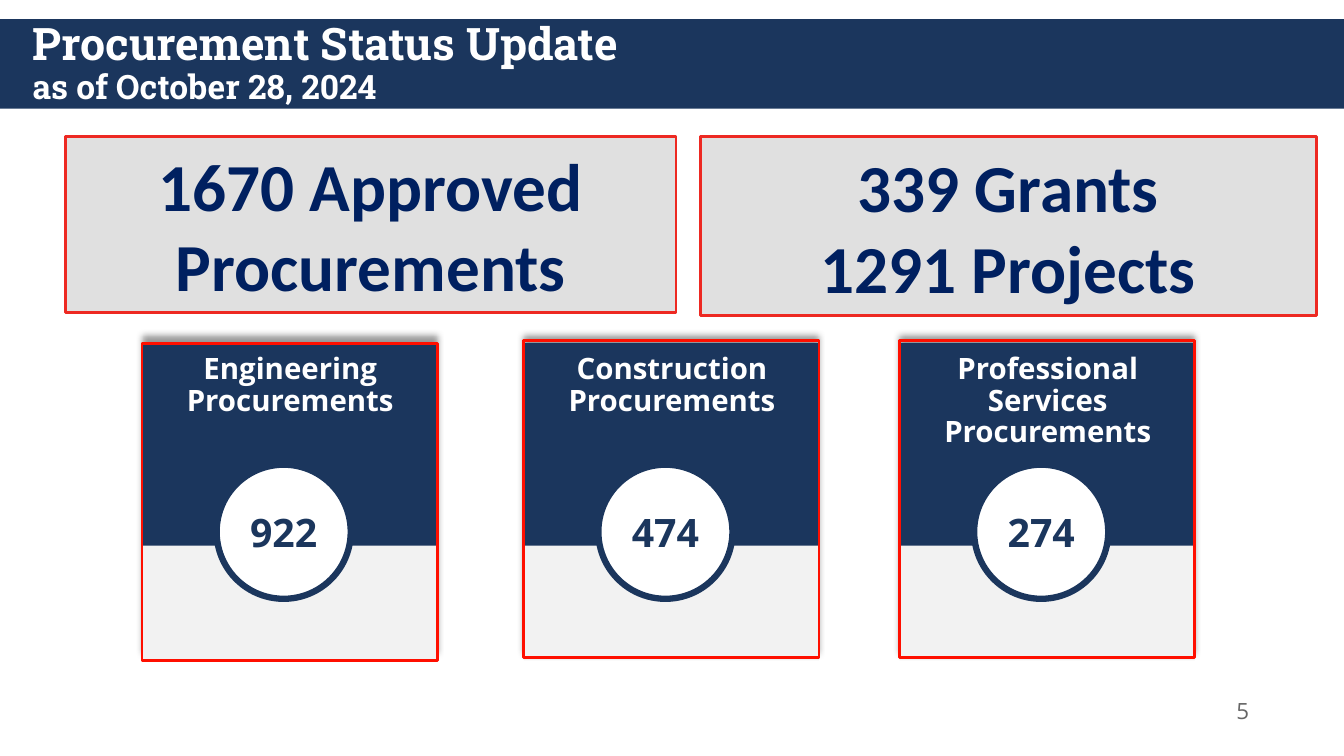
"""Build the procurement status slide."""
from dataclasses import dataclass

from lxml.etree import SubElement
from pptx import Presentation
from pptx.dml.color import RGBColor
from pptx.enum.shapes import MSO_SHAPE
from pptx.enum.text import MSO_ANCHOR, PP_ALIGN
from pptx.oxml.ns import qn
from pptx.shapes.autoshape import Shape
from pptx.slide import Slide
from pptx.text.text import Font
from pptx.util import Cm, Pt

COLORS = {
    "navy": "1B365D", "white": "FFFFFF", "light": "F2F2F2", "panel": "E0E0E0",
    "panel_line": "ED2922", "frame": "FF0F00", "total": "002060",
    "number": "666666", "shadow": "000000",
}
CARD_TOP, CARD_W, CARD_H = 8.64, 7.44, 8.0
HEADER_H, CIRCLE, LABEL_W = 5.11, 3.38, 6.81


@dataclass
class Box:
    """Position and size in centimetres."""
    x: float
    y: float
    w: float
    h: float


@dataclass
class Panel:
    """A large summary figure."""
    box: Box
    lines: list[str]


@dataclass
class Card:
    """A procurement category with its count."""
    x: float
    frame_top: float
    label: str
    label_h: float
    count: str


PANELS = [
    Panel(Box(1.65, 3.45, 15.39, 4.42), ["1670 Approved Procurements"]),
    Panel(Box(17.65, 3.45, 15.52, 4.5), ["339 Grants", "1291 Projects"]),
]
CARDS = [
    Card(3.58, 8.66, "Engineering Procurements", 1.8, "922"),
    Card(13.2, 8.59, "Construction Procurements", 1.8, "474"),
    Card(22.67, 8.59, "Professional Services Procurements", 2.7, "274"),
]


def rgb(name: str) -> RGBColor:
    """Look up a colour."""
    return RGBColor.from_string(COLORS[name])


def style_font(font: Font, name: str, size: float, color: str, bold: bool) -> None:
    """Set the face, size, colour and weight of a font."""
    font.name, font.size, font.bold = name, Pt(size), bold
    font.color.rgb = rgb(color)


def add_box(s: Slide, box: Box, fill: str = "", line: str = "", width: float = 2,
            kind: MSO_SHAPE = MSO_SHAPE.RECTANGLE) -> Shape:
    """Add a flat preset shape."""
    sp = s.shapes.add_shape(kind, Cm(box.x), Cm(box.y), Cm(box.w), Cm(box.h))
    sp.shadow.inherit = False
    if fill:
        sp.fill.solid()
        sp.fill.fore_color.rgb = rgb(fill)
    else:
        sp.fill.background()
    if line:
        sp.line.color.rgb = rgb(line)
        sp.line.width = Pt(width)
    else:
        sp.line.fill.background()
    return sp


def add_textbox(s: Slide, box: Box) -> Shape:
    """Add an empty text box."""
    return s.shapes.add_textbox(Cm(box.x), Cm(box.y), Cm(box.w), Cm(box.h))


def write(sp: Shape, lines: list[str], name: str, size: float, color: str,
          bold: bool = True, anchor: MSO_ANCHOR = MSO_ANCHOR.MIDDLE,
          margin: float = 0, spacing: float = 1) -> None:
    """Fill a shape with centred paragraphs."""
    tf = sp.text_frame
    tf.word_wrap = True
    tf.vertical_anchor = anchor
    tf.margin_left = tf.margin_right = Cm(margin)
    tf.margin_top = tf.margin_bottom = Cm(margin / 2)
    tf.text = "\n".join(lines)
    for p in tf.paragraphs:
        p.alignment = PP_ALIGN.CENTER
        p.line_spacing = spacing
        style_font(p.font, name, size, color, bold)


def add_shadow(sp: Shape) -> None:
    """Give a shape a soft shadow along its upper edge."""
    effects = sp._element.spPr.find(qn("a:effectLst"))
    shadow = SubElement(effects, qn("a:outerShdw"), blurRad=str(Pt(5)),
                        dist=str(Pt(5)), dir="16200000", rotWithShape="0")
    color = SubElement(shadow, qn("a:srgbClr"), val=COLORS["shadow"])
    SubElement(color, qn("a:alpha"), val="40000")


def add_title(s: Slide) -> None:
    """Place the title over its navy band."""
    band = add_box(s, Box(0, 0.48, 33.87, 2.26), "navy")
    s.shapes._spTree.insert(2, band._element)
    title = s.shapes.title
    title.left, title.top, title.width, title.height = Cm(0.56), Cm(0.48), Cm(32.74), Cm(2.29)
    tf = title.text_frame
    tf.vertical_anchor = MSO_ANCHOR.MIDDLE
    p = tf.paragraphs[0]
    p.alignment = PP_ALIGN.LEFT
    p.line_spacing = 0.9
    style_font(p.font, "Roboto Slab", 24, "white", True)
    r = p.add_run()
    r.text = "Procurement Status Update"
    r.font.size = Pt(32)
    p.add_line_break()
    p.add_run().text = "as of October 28, 2024"


def add_card(s: Slide, card: Card) -> None:
    """Draw a card with its header, count, label and frame."""
    add_shadow(add_box(s, Box(card.x, CARD_TOP, CARD_W, CARD_H), "light"))
    add_box(s, Box(card.x, CARD_TOP, CARD_W, HEADER_H), "navy")
    circle = add_box(s, Box(card.x + 1.88, 11.71, CIRCLE, CIRCLE), "white", "navy", 4.5,
                     MSO_SHAPE.OVAL)
    write(circle, [card.count], "Open Sans", 28, "navy", margin=0.34)
    label = add_textbox(s, Box(card.x + 0.33, 8.94, LABEL_W, card.label_h))
    write(label, [card.label], "Open Sans", 21, "white", anchor=MSO_ANCHOR.TOP, spacing=0.89)
    add_box(s, Box(card.x, card.frame_top, CARD_W, 7.98), line="frame")


def main() -> None:
    """Build and save the slide."""
    prs = Presentation()
    prs.slide_width, prs.slide_height = Cm(33.87), Cm(19.05)
    s = prs.slides.add_slide(prs.slide_layouts[5])
    add_title(s)
    for card in CARDS:
        add_card(s, card)
    for panel in PANELS:
        sp = add_box(s, panel.box, "panel", "panel_line")
        write(sp, panel.lines, "Calibri", 48, "total", margin=0.34)
    number = add_textbox(s, Box(30.47, 17.36, 1.7, 1.07))
    write(number, ["5"], "Open Sans", 16, "number", bold=False)
    prs.save("out.pptx")


if __name__ == "__main__":
    main()
